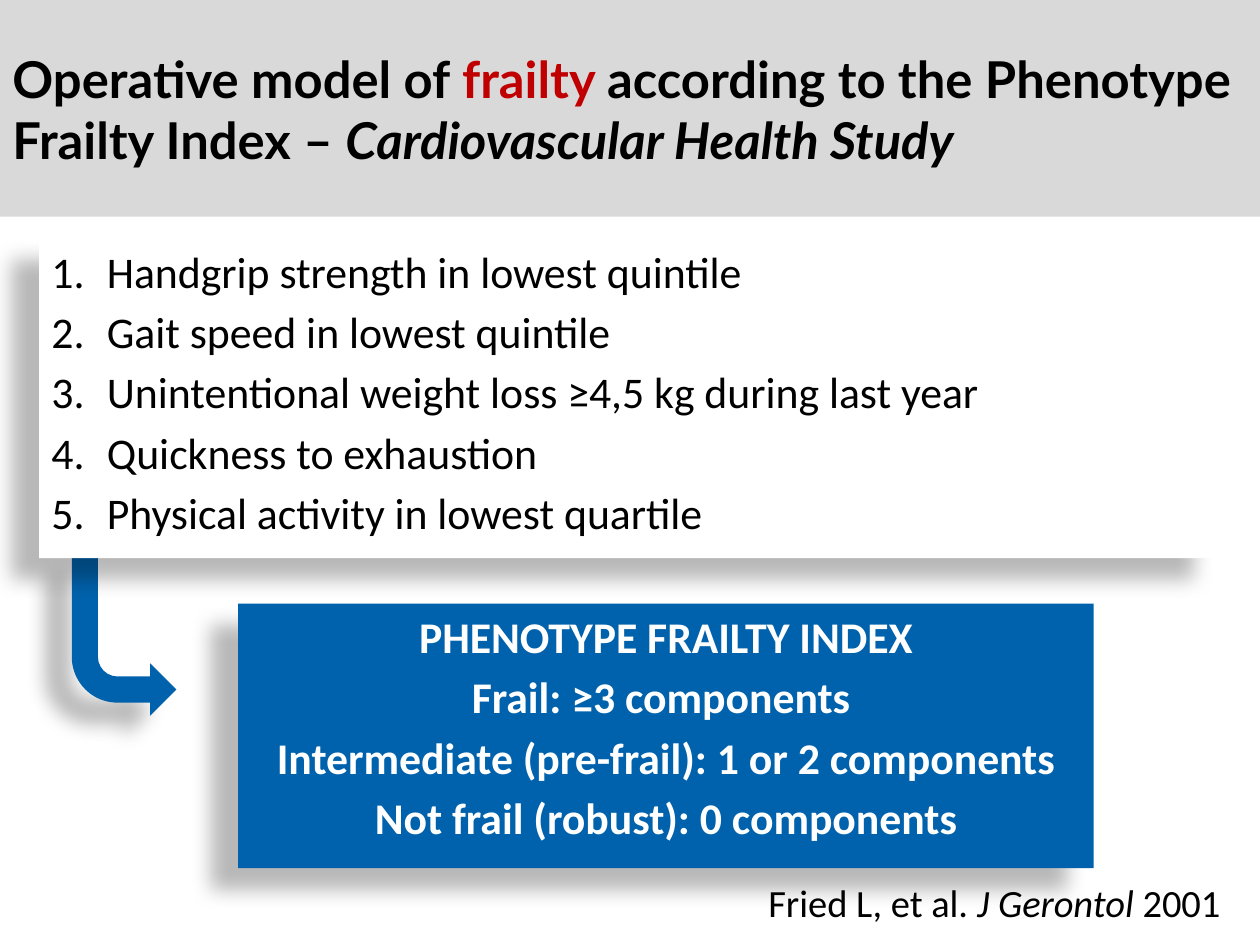
from lxml.etree import SubElement
from pptx import Presentation
from pptx.dml.color import RGBColor
from pptx.enum.shapes import MSO_SHAPE as SHAPE
from pptx.enum.text import MSO_ANCHOR as ANCHOR, PP_ALIGN as ALIGN
from pptx.oxml.ns import qn
from pptx.util import Inches, Pt

COLORS = {"black": "000000", "white": "FFFFFF", "blue": "0062AC",
          "gray": "D9D9D9", "red": "C00000"}


def add_block(kind, box, fill, shadow=True):
    """Add a borderless filled shape, optionally with a soft shadow to the lower left."""
    block = slide.shapes.add_shape(kind, *(Inches(v) for v in box))
    block.fill.solid()
    block.fill.fore_color.rgb = RGBColor.from_string(COLORS[fill])
    block.line.fill.background()
    block.shadow.inherit = False
    if shadow:
        effects = block._element.spPr.find(qn("a:effectLst"))
        outer = SubElement(effects, qn("a:outerShdw"), blurRad=str(Pt(11.8)),
                           dist=str(Pt(19.7)), dir=str(141 * 60000),
                           algn="ctr", rotWithShape="0")
        tint = SubElement(outer, qn("a:srgbClr"), val=COLORS["black"])
        SubElement(tint, qn("a:alpha"), val="28000")
    return block


def add_run(paragraph, text, size, color="black", font="Calibri", bold=False, italic=False):
    run = paragraph.add_run()
    run.text = text
    run.font.size = Pt(size)
    run.font.name = font
    run.font.bold = bold
    run.font.italic = italic
    run.font.color.rgb = RGBColor.from_string(COLORS[color])


prs = Presentation()
prs.slide_width, prs.slide_height = Inches(10), Inches(7.5)
slide = prs.slides.add_slide(prs.slide_layouts[6])

# Arrow from the criteria down to the index
arrow = add_block(SHAPE.BENT_ARROW, (0.57, 4.39, 0.83, 1.29), "blue")
arrow._element.spPr.find(qn("a:xfrm")).set("flipV", "1")

# Citation
citation = slide.shapes.add_textbox(Inches(6), Inches(6.93), Inches(3.81), Inches(0.46))
citation.text_frame.word_wrap = False
for text, italic in (("Fried L, et al. ", False), ("J Gerontol", True), (" 2001", False)):
    add_run(citation.text_frame.paragraphs[0], text, 22, italic=italic)

# Criteria and index panels
criteria = add_block(SHAPE.RECTANGLE, (0.31, 1.89, 9.38, 2.54), "white")
index = add_block(SHAPE.RECTANGLE, (1.89, 4.79, 6.79, 2.1), "blue")
panels = [
    (criteria, "black", True, [
        "Handgrip strength in lowest quintile",
        "Gait speed in lowest quintile",
        "Unintentional weight loss ≥4,5 kg during last year",
        "Quickness to exhaustion",
        "Physical activity in lowest quartile",
    ]),
    (index, "white", False, [
        "PHENOTYPE FRAILTY INDEX",
        "Frail: ≥3 components ",
        "Intermediate (pre-frail): 1 or 2 components",
        "Not frail (robust): 0 components",
    ]),
]
for panel, color, numbered, lines in panels:
    frame = panel.text_frame
    frame.word_wrap = True
    frame.vertical_anchor = ANCHOR.TOP
    for number, line in enumerate(lines):
        paragraph = frame.add_paragraph() if number else frame.paragraphs[0]
        paragraph.alignment = ALIGN.LEFT if numbered else ALIGN.CENTER
        paragraph.space_before = Pt(4.5)
        if numbered:
            props = paragraph._p.get_or_add_pPr()
            props.set("marL", str(Inches(0.44)))
            props.set("indent", str(Inches(-0.44)))
            SubElement(props, qn("a:buFont"), typeface="+mj-lt")
            SubElement(props, qn("a:buAutoNum"), type="arabicPeriod")
        add_run(paragraph, line, 25, color, bold=not numbered)

# Title band
title = add_block(SHAPE.RECTANGLE, (0, 0, 10, 1.72), "gray", shadow=False)
title.text_frame.word_wrap = True
title.text_frame.vertical_anchor = ANCHOR.MIDDLE
heading = title.text_frame.paragraphs[0]
heading.alignment = ALIGN.LEFT
for text, color, italic in (
    ("Operative model of ", "black", False),
    ("frailty ", "red", False),
    ("according to the Phenotype Frailty Index – ", "black", False),
    ("Cardiovascular Health Study", "black", True),
):
    add_run(heading, text, 29, color, "Lato", True, italic)

prs.save("out.pptx")
